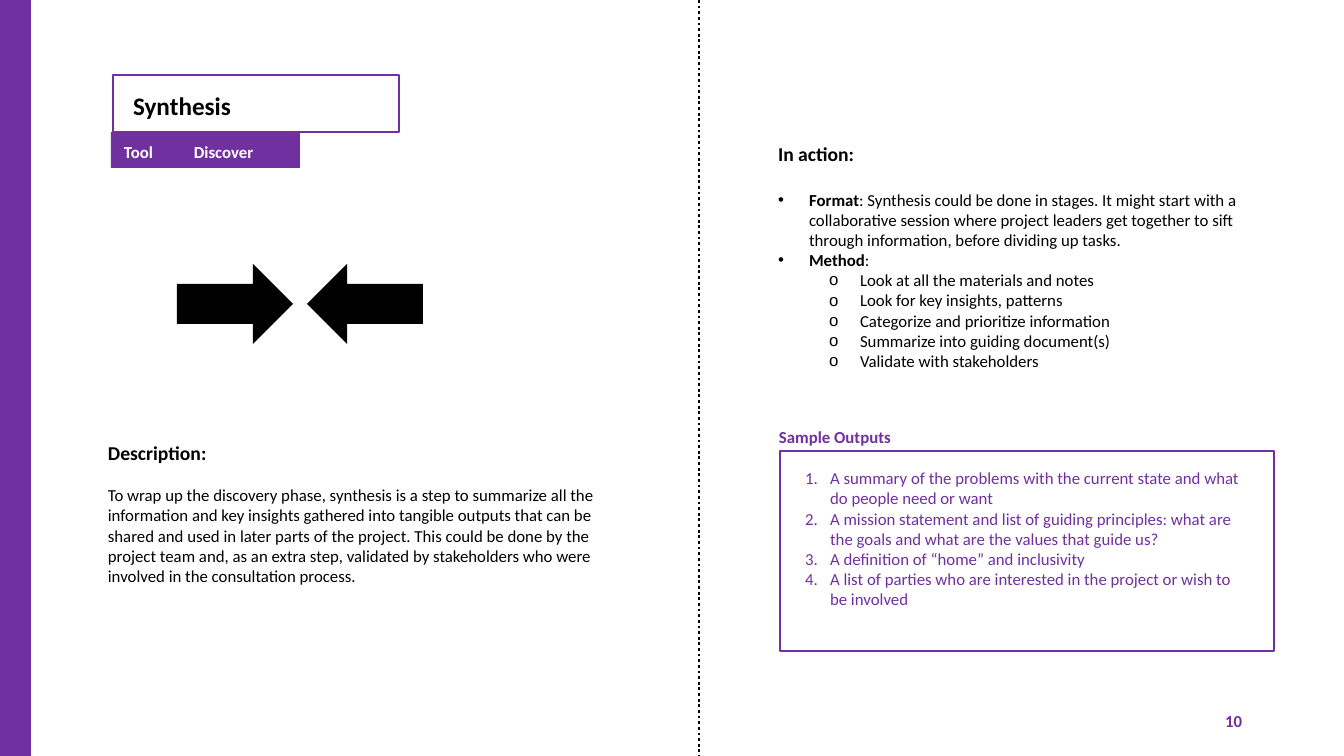
from lxml import etree
from pptx import Presentation
from pptx.dml.color import RGBColor
from pptx.enum.dml import MSO_LINE
from pptx.enum.shapes import MSO_CONNECTOR, MSO_SHAPE
from pptx.enum.text import MSO_ANCHOR, MSO_AUTO_SIZE, PP_ALIGN
from pptx.oxml.ns import qn
from pptx.util import Pt

PX = 914400 / 100.8
COLORS = {"purple": "7030A0", "black": "000000", "white": "FFFFFF"}
RECT, DOWN_ARROW = MSO_SHAPE.RECTANGLE, MSO_SHAPE.DOWN_ARROW
LEFT, RIGHT = PP_ALIGN.LEFT, PP_ALIGN.RIGHT
TOP, MIDDLE = MSO_ANCHOR.TOP, MSO_ANCHOR.MIDDLE
TWO_CONTENT = 3


def px(*lengths):
    return [round(length * PX) for length in lengths]


def add_text(paragraph, text, size=12, color="black", bold=False):
    run = paragraph.add_run()
    run.text = text
    run.font.name = "Calibri"
    run.font.size = Pt(size)
    run.font.bold = bold
    run.font.color.rgb = RGBColor.from_string(COLORS[color])


prs = Presentation()
prs.slide_width, prs.slide_height = px(1344, 756)
slide = prs.slides.add_slide(prs.slide_layouts[TWO_CONTENT])
shapes = slide.shapes
title, in_action, outputs = slide.placeholders

# Placeholders
for holder, box in (
    (title, (123, 85, 290, 40)),
    (in_action, (768, 137, 526, 308)),
    (outputs, (795, 463, 457, 254)),
):
    holder.left, holder.top, holder.width, holder.height = px(*box)
    holder.text_frame.auto_size = MSO_AUTO_SIZE.NONE
    holder.text_frame.word_wrap = True
    holder.text_frame.vertical_anchor = TOP

heading = title.text_frame.paragraphs[0]
heading.alignment = LEFT
add_text(heading, "Synthesis", 18, bold=True)

# Lists: level, left indent, hanging indent, marker, space before, runs of (text, size, color, bold)
action_rows = [
    (0, 0, 0, ("a:buNone", {}), 0, [("In action:", 14, "black", True)]),
    (0, 31, 31, ("a:buChar", {"char": "•"}), 17, [
        ("Format", 12, "black", True),
        (": Synthesis could be done in stages. It might start with a collaborative session "
         "where project leaders get together to sift through information, before dividing up tasks.",
         12, "black", False)]),
    (0, 31, 31, ("a:buChar", {"char": "•"}), 0, [
        ("Method", 12, "black", True), (":", 12, "black", False)]),
]
for step in (
    "Look at all the materials and notes",
    "Look for key insights, patterns",
    "Categorize and prioritize information",
    "Summarize into guiding document(s)",
    "Validate with stakeholders",
):
    action_rows.append((1, 82, 31, ("a:buChar", {"char": "o"}), 0, [(step, 12, "black", False)]))

output_rows = [
    (0, 25, 25, ("a:buAutoNum", {"type": "arabicPeriod"}), 0, [(output, 12, "purple", False)])
    for output in (
        "A summary of the problems with the current state and what do people need or want",
        "A mission statement and list of guiding principles: what are the goals and what are "
        "the values that guide us?",
        "A definition of “home” and inclusivity",
        "A list of parties who are interested in the project or wish to be involved",
    )
]

for holder, rows in ((in_action, action_rows), (outputs, output_rows)):
    frame = holder.text_frame
    for index, (level, indent, hanging, (marker, attributes), gap, runs) in enumerate(rows):
        paragraph = frame.add_paragraph() if index else frame.paragraphs[0]
        paragraph.level = level
        properties = paragraph._p.get_or_add_pPr()
        margin, outdent = px(indent, -hanging)
        properties.set("marL", str(margin))
        properties.set("indent", str(outdent))
        etree.SubElement(properties, qn(marker), attributes)
        paragraph.space_before = Pt(gap)
        for run in runs:
            add_text(paragraph, *run)

# Bars, frames and facing arrows: kind, box, rotation, fill, line width
for kind, box, rotation, fill, line_width in (
    (RECT, (-3, 0, 34, 756), 0, "purple", 0),
    (RECT, (113, 75, 286, 57), 0, None, 1.5),
    (DOWN_ARROW, (195, 246, 80, 116), 270, "black", 0),
    (DOWN_ARROW, (325, 246, 80, 116), 90, "black", 0),
    (RECT, (111, 132, 189, 36), 0, "purple", 0),
    (RECT, (780, 451, 494, 200), 0, None, 1),
):
    shape = shapes.add_shape(kind, *px(*box))
    shape.shadow.inherit = False
    shape.rotation = rotation
    if fill:
        shape.fill.solid()
        shape.fill.fore_color.rgb = RGBColor.from_string(COLORS[fill])
    else:
        shape.fill.background()
    if line_width:
        shape.line.color.rgb = RGBColor.from_string(COLORS["purple"])
        shape.line.width = Pt(line_width)
    else:
        shape.line.fill.background()

# Page divider
divider = shapes.add_connector(MSO_CONNECTOR.STRAIGHT, *px(699, 0, 699, 756))
divider.line.color.rgb = RGBColor.from_string(COLORS["black"])
divider.line.width = Pt(2)
divider.line.dash_style = MSO_LINE.ROUND_DOT
etree.SubElement(divider._element.spPr, qn("a:effectLst"))

# Labels
label_frames = []
for box, text, color, alignment, anchor in (
    ((950, 701, 302, 40), "10", "purple", RIGHT, MIDDLE),
    ((114, 137, 290, 30), "Tool\tDiscover", "white", LEFT, TOP),
    ((769, 422, 607, 92), "Sample Outputs", "purple", LEFT, TOP),
):
    frame = shapes.add_textbox(*px(*box)).text_frame
    frame.word_wrap = True
    frame.vertical_anchor = anchor
    frame.paragraphs[0].alignment = alignment
    if "\t" in text:
        tabs = etree.SubElement(frame.paragraphs[0]._p.get_or_add_pPr(), qn("a:tabLst"))
        etree.SubElement(tabs, qn("a:tab"), {"pos": str(px(70)[0]), "algn": "l"})
    add_text(frame.paragraphs[0], text, color=color, bold=True)

# Description
description = shapes.add_textbox(*px(98, 436, 508, 201)).text_frame
description.word_wrap = True
add_text(description.paragraphs[0], "Description:", 14, bold=True)
summary = description.add_paragraph()
summary.space_before = Pt(14.6)
add_text(
    summary,
    "To wrap up the discovery phase, synthesis is a step to summarize all the information and key "
    "insights gathered into tangible outputs that can be shared and used in later parts of the "
    "project. This could be done by the project team and, as an extra step, validated by "
    "stakeholders who were involved in the consultation process.",
)

prs.save("out.pptx")
